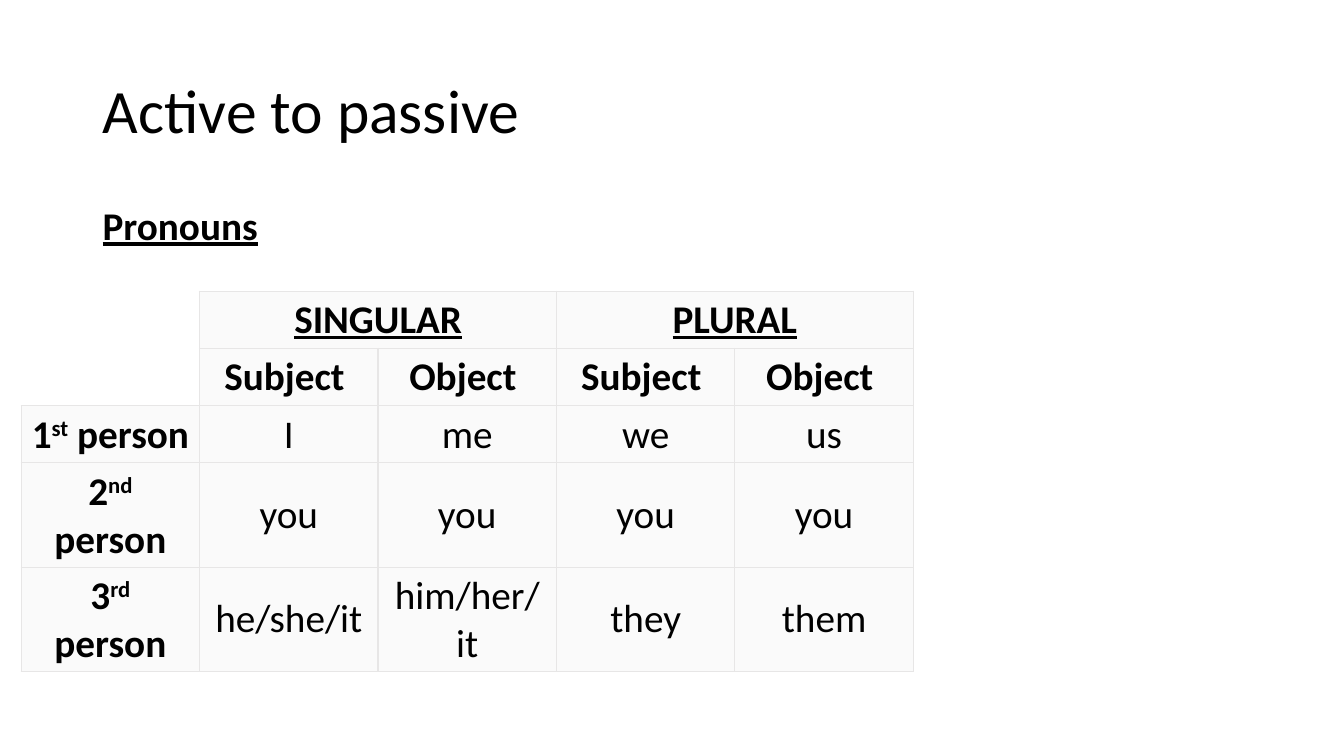
from lxml.etree import SubElement
from pptx import Presentation
from pptx.dml.color import RGBColor
from pptx.enum.text import MSO_ANCHOR, PP_ALIGN
from pptx.oxml.ns import qn
from pptx.util import Inches, Pt

# Content
TITLE = "Active to passive"
HEADING = "Pronouns"
NUMBERS = ["SINGULAR", "PLURAL"]
CASES = ["Subject ", "Object "]
PERSONS = [
    ("1", "st", ["I", "me", "we", "us"]),
    ("2", "nd", ["you", "you", "you", "you"]),
    ("3", "rd", ["he/she/it", "him/her/it", "they", "them"]),
]

# Style and grid, in inches
COLORS = {"text": "000000", "cell": "FAFAFA", "border": "E7E6E6"}
FONT = "Calibri"
MARGIN, TEXT_W = 0.92, 11.5
TABLE_LEFT, TABLE_TOP, COL_W, ROW_H = 0.21, 2.89, 1.77, 0.41
HEADER_ROWS = 2
N_ROWS = HEADER_ROWS + len(PERSONS)
N_COLS = 1 + len(NUMBERS) * len(CASES)


def style(p, size, bold=False, underline=False, align=PP_ALIGN.LEFT):
    p.alignment = align
    f = p.font
    f.name, f.size, f.bold, f.underline = FONT, Pt(size), bold, underline
    f.color.rgb = RGBColor.from_string(COLORS["text"])


def set_borders(cell, sides):
    tcPr = cell._tc.get_or_add_tcPr()
    for side in "LRTB":
        ln = SubElement(tcPr, qn(f"a:ln{side}"), w=str(Pt(1)))
        if side in sides:
            fill = SubElement(ln, qn("a:solidFill"))
            SubElement(fill, qn("a:srgbClr"), val=COLORS["border"])
        else:
            SubElement(ln, qn("a:noFill"))


def fill_cell(cell, parts, bold=True, underline=False):
    """Write text parts; every second part is superscript."""
    p = cell.text_frame.paragraphs[0]
    for i, text in enumerate(parts):
        r = p.add_run()
        r.text = text
        if i % 2:
            r._r.get_or_add_rPr().set("baseline", "30000")
    style(p, 28, bold, underline, PP_ALIGN.CENTER)


prs = Presentation()
prs.slide_width, prs.slide_height = Inches(13.33), Inches(7.5)
s = prs.slides.add_slide(prs.slide_layouts[5])

# Title
title = s.shapes.title
title.left, title.top = Inches(MARGIN), Inches(0.4)
title.width, title.height = Inches(TEXT_W), Inches(1.45)
title.text_frame.text = TITLE
title.text_frame.vertical_anchor = MSO_ANCHOR.MIDDLE
p = title.text_frame.paragraphs[0]
p.line_spacing = 0.9
style(p, 44)

# Heading
box = s.shapes.add_textbox(Inches(MARGIN), Inches(2), Inches(TEXT_W), Inches(4.76))
tf = box.text_frame
tf.word_wrap = True
tf.text = HEADING
p = tf.paragraphs[0]
p.line_spacing = 0.9
style(p, 28, bold=True, underline=True)

# Table grid
table = s.shapes.add_table(
    N_ROWS, N_COLS, Inches(TABLE_LEFT), Inches(TABLE_TOP),
    Inches(COL_W * N_COLS), Inches(ROW_H * N_ROWS)).table
table.first_row = table.horz_banding = False
for col in table.columns:
    col.width = Inches(COL_W)
for row in table.rows:
    row.height = Inches(ROW_H)
for r in range(N_ROWS):
    for c in range(N_COLS):
        cell = table.cell(r, c)
        corner = c == 0 and r < HEADER_ROWS
        set_borders(cell, "RB" if corner else "LRTB")
        if corner:
            cell.fill.background()
        else:
            cell.fill.solid()
            cell.fill.fore_color.rgb = RGBColor.from_string(COLORS["cell"])

# Header rows
corner_cell = table.cell(0, 0)
corner_cell.merge(table.cell(HEADER_ROWS - 1, 0))
style(corner_cell.text_frame.paragraphs[0], 28)
for i, number in enumerate(NUMBERS):
    first = 1 + i * len(CASES)
    table.cell(0, first).merge(table.cell(0, first + len(CASES) - 1))
    fill_cell(table.cell(0, first), [number], underline=True)
    for j, case in enumerate(CASES):
        fill_cell(table.cell(1, first + j), [case])

# Person rows
for r, (digit, suffix, pronouns) in enumerate(PERSONS, HEADER_ROWS):
    fill_cell(table.cell(r, 0), [digit, suffix, " person"])
    for c, pronoun in enumerate(pronouns, 1):
        fill_cell(table.cell(r, c), [pronoun], bold=False)
        table.cell(r, c).vertical_anchor = MSO_ANCHOR.MIDDLE

prs.save("out.pptx")
